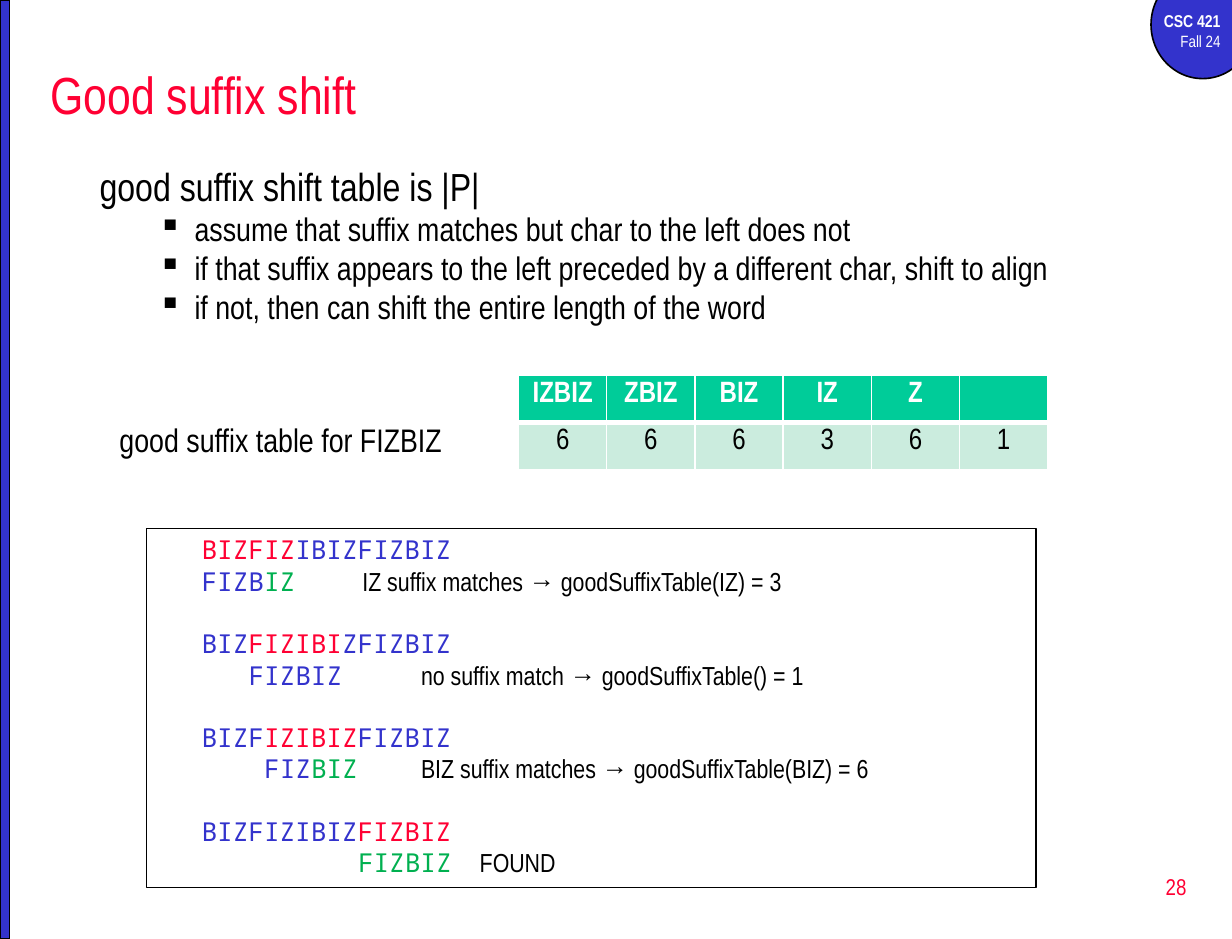
import pptx
import pptx.util
import pptx.dml.color
import pptx.enum.shapes
import pptx.enum.text
import pptx.oxml
import pptx.oxml.ns

Inches, Pt = pptx.util.Inches, pptx.util.Pt
RGB = pptx.dml.color.RGBColor
ALIGN = pptx.enum.text.PP_ALIGN
ANCHOR = pptx.enum.text.MSO_ANCHOR
SHAPE = pptx.enum.shapes.MSO_SHAPE

BLUE = RGB(0x33, 0x33, 0xCC)
RED = RGB(0xFF, 0x00, 0x33)
GREEN = RGB(0x00, 0xB0, 0x50)
BLACK = RGB(0, 0, 0)
WHITE = RGB(255, 255, 255)
TEAL = RGB(0x00, 0xCC, 0x99)
MINT = RGB(0xCB, 0xEC, 0xDE)
SANS = "Arial Narrow"
MONO = "Noto Sans Mono"

POINTS = [
    "assume that suffix matches but char to the left does not",
    "if that suffix appears to the left preceded by a different char, shift to align",
    "if not, then can shift the entire length of the word",
]
SHIFTS = [("IZBIZ", "6"), ("ZBIZ", "6"), ("BIZ", "6"),
          ("IZ", "3"), ("Z", "6"), ("", "1")]
TEXT = "BIZFIZIBIZFIZBIZ"
WORD = "FIZBIZ"
# offset of the word, length of matched suffix, tabs, note
STEPS = [
    (0, 2, "\t\t", "IZ suffix matches → goodSuffixTable(IZ) = 3"),
    (3, 0, "\t\t", "no suffix match → goodSuffixTable() = 1"),
    (4, 3, "\t\t", "BIZ suffix matches → goodSuffixTable(BIZ) = 6"),
    (10, 6, "\t", "FOUND"),
]
CHAR = 0.1333  # width of one 16 pt mono letter, inches


def style(run, size, color, font=SANS, bold=False):
    run.font.size = Pt(size)
    run.font.color.rgb = color
    run.font.name = font
    run.font.bold = bold


def indent(para, left, first):
    props = para._p.get_or_add_pPr()
    props.set("marL", str(Inches(left)))
    props.set("indent", str(Inches(first)))
    return props


def add_shape(slide, kind, box, fill=None, width=1):
    shape = slide.shapes.add_shape(kind, *map(Inches, box))
    shape.shadow.inherit = False
    if fill is None:
        shape.fill.background()
    else:
        shape.fill.solid()
        shape.fill.fore_color.rgb = fill
    shape.line.color.rgb = BLACK
    shape.line.width = Pt(width)
    return shape


def add_text(slide, box, text, size, color, align=ALIGN.LEFT, anchor=ANCHOR.TOP):
    frame = slide.shapes.add_textbox(*map(Inches, box)).text_frame
    frame.word_wrap = True
    frame.vertical_anchor = anchor
    frame.text = text
    for para in frame.paragraphs:
        para.alignment = align
        for run in para.runs:
            style(run, size, color)
    return frame


def add_points(frame):
    for text in POINTS:
        para = frame.add_paragraph()
        para.text = text
        para.line_spacing = 0.8
        para.space_before = Pt(4.8)
        style(para.runs[0], 20, BLACK)
        bullet = pptx.oxml.parse_xml(
            f'<a:buChar {pptx.oxml.ns.nsdecls("a")} char="▪"/>')
        indent(para, 0.81, -0.31).append(bullet)


def edge(cell, sides):
    """Draw white borders; sides maps a border tag to its width in points."""
    props = cell._tc.get_or_add_tcPr()
    for place, (tag, width) in enumerate(sides.items()):
        props.insert(place, pptx.oxml.parse_xml(
            f'<a:{tag} {pptx.oxml.ns.nsdecls("a")} w="{Pt(width)}"><a:solidFill>'
            f'<a:srgbClr val="{WHITE}"/></a:solidFill></a:{tag}>'))


def add_shifts(slide):
    table = slide.shapes.add_table(
        2, len(SHIFTS), Inches(4.42), Inches(3.2), Inches(4.51), Inches(0.8)).table
    for col, pair in enumerate(SHIFTS):
        for row, text in enumerate(pair):
            head = row == 0
            cell = table.cell(row, col)
            cell.fill.solid()
            cell.fill.fore_color.rgb = TEAL if head else MINT
            edge(cell, {"lnL": 1, "lnR": 1, "lnT": 1 if head else 3,
                        "lnB": 3 if head else 1})
            para = cell.text_frame.paragraphs[0]
            para.text = text
            para.alignment = ALIGN.CENTER
            for run in para.runs:
                style(run, 18, WHITE if head else BLACK, bold=head)


def add_line(para, parts, shift=0):
    """Write (text, colour, font) parts, moved right by shift letters."""
    para.alignment = ALIGN.LEFT
    indent(para, 0.74, -0.37 + shift * CHAR)
    for text, color, font in parts:
        if text:
            run = para.add_run()
            run.text = text
            style(run, 16, color, font)


def add_trace(slide):
    box = add_shape(slide, SHAPE.RECTANGLE, (1.25, 4.5, 7.58, 3.06), width=0.75)
    frame = box.text_frame
    frame.word_wrap = True
    frame.vertical_anchor = ANCHOR.TOP
    for step, (start, match, tabs, note) in enumerate(STEPS):
        end = start + len(WORD)
        cut = len(WORD) - match
        para = frame.add_paragraph() if step else frame.paragraphs[0]
        if step:
            para.space_before = Pt(19.2)
        add_line(para, [(TEXT[:start], BLUE, MONO), (TEXT[start:end], RED, MONO),
                        (TEXT[end:], BLUE, MONO)])
        add_line(frame.add_paragraph(),
                 [(WORD[:cut], BLUE, MONO), (WORD[cut:], GREEN, MONO),
                  (tabs, BLUE, MONO), (note, BLACK, SANS)], start)


def main():
    deck = pptx.Presentation()
    deck.slide_width, deck.slide_height = Inches(10.5), Inches(8)
    slide = deck.slides.add_slide(deck.slide_layouts[6])

    add_shape(slide, SHAPE.OVAL, (9.81, -0.25, 0.88, 0.92), BLUE)
    badge = add_text(slide, (9.67, 0.04, 0.83, 0.46), "CSC 421\nFall 24",
                     10, WHITE, ALIGN.RIGHT)
    style(badge.paragraphs[0].runs[0], 10.5, WHITE, bold=True)
    add_shape(slide, SHAPE.RECTANGLE, (0, 0, 0.08, 8), BLUE)

    add_text(slide, (0.33, 0.42, 9.92, 0.75), "Good suffix shift", 32, RED,
             anchor=ANCHOR.MIDDLE)
    body = add_text(slide, (0.75, 1.33, 9.52, 1.08),
                    "good suffix shift table is |P|", 24, BLACK)
    add_points(body)
    add_text(slide, (8.02, 7.29, 2.19, 0.53), "28", 14, RED,
             ALIGN.RIGHT, ANCHOR.MIDDLE)
    add_shifts(slide)
    add_text(slide, (0.92, 3.53, 3, 0.44), "good suffix table for FIZBIZ", 20, BLACK)
    add_trace(slide)
    deck.save("out.pptx")


if __name__ == "__main__":
    main()
